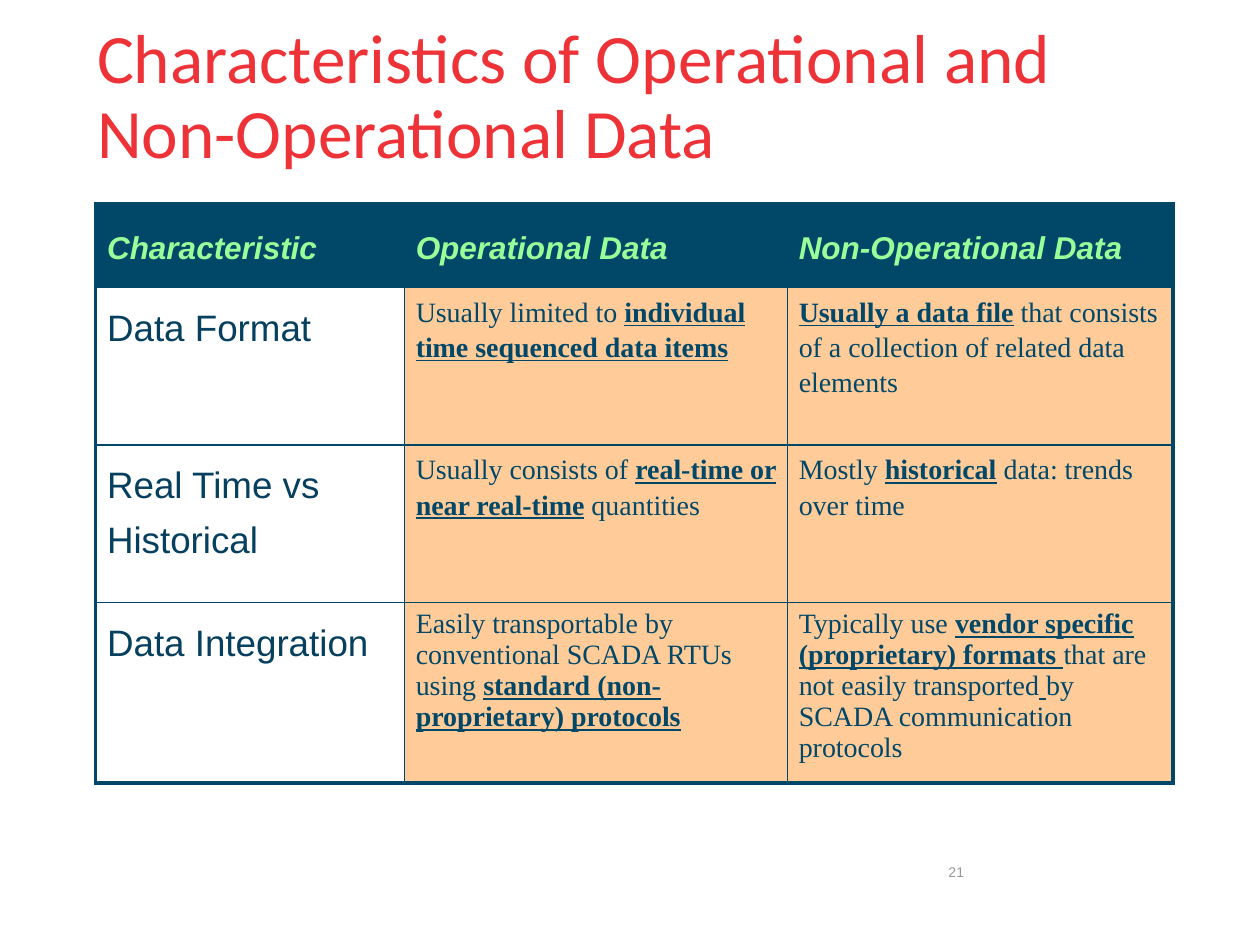
from dataclasses import dataclass
from typing import Any

import lxml.etree
import pptx
import pptx.dml.color
import pptx.enum.text
import pptx.oxml.ns
import pptx.util

# The slide is a grid of 100 columns by 75 rows
COLUMNS, ROWS = 100, 75
NAVY, PEACH, MINT, RED = "004768", "FFCC99", "99FF99", "EE3338"
OUTER, INNER = 2.25, 1
ANCHOR = pptx.enum.text.MSO_ANCHOR
ALIGN = pptx.enum.text.PP_ALIGN

deck = pptx.Presentation()
deck.slide_width = pptx.util.Inches(10)
deck.slide_height = pptx.util.Inches(7.5)
slide = deck.slides.add_slide(deck.slide_layouts[6])


@dataclass(frozen=True)
class Style:
    font: dict[str, Any]
    color: str
    line_spacing: Any = None


@dataclass(frozen=True)
class Place:
    left: float
    top: float
    width: float
    height: float


def across(columns: float) -> int:
    return round(deck.slide_width * columns / COLUMNS)


def down(rows: float) -> int:
    return round(deck.slide_height * rows / ROWS)


def rgb(color: str) -> pptx.dml.color.RGBColor:
    return pptx.dml.color.RGBColor.from_string(color)


def apply(target: Any, values: dict[str, Any]) -> None:
    for name, value in values.items():
        setattr(target, name, value)


def font_values(name: str, size: float, **extra: Any) -> dict[str, Any]:
    return {"name": name, "size": pptx.util.Pt(size), **extra}


EMPHASIS = {"bold": True, "underline": True}
UNDERLINE = {"underline": True}

TITLE = Style(font_values("Calibri", 39.6), RED, 0.9)
PAGE = Style(font_values("Arial", 8), "96989B")
HEADER = Style(font_values("Arial", 18, bold=True, italic=True), MINT, pptx.util.Pt(31.6))
LABEL = Style(font_values("Arial", 21), "07405F", pptx.util.Pt(31.6))
DETAIL = Style(font_values("Times New Roman", 16), NAVY, pptx.util.Pt(20))
TIGHT_DETAIL = Style(DETAIL.font, NAVY)

# Each cell is a list of runs: plain text, or text with extra font values
HEADINGS = [["Characteristic"], ["Operational Data"], ["Non-Operational Data"]]
CHARACTERISTICS = [
    [
        ["Data Format"],
        ["Usually limited to ", ("individual time sequenced data items", EMPHASIS)],
        [("Usually a data file", EMPHASIS),
         " that consists of a collection of related data elements"],
    ],
    [
        ["Real Time vs Historical"],
        ["Usually consists of ", ("real-time or near real-time", EMPHASIS), " quantities"],
        ["Mostly ", ("historical", EMPHASIS), " data: trends over time"],
    ],
    [
        ["Data Integration"],
        ["Easily transportable by conventional SCADA RTUs using ",
         ("standard (non-proprietary) protocols", EMPHASIS)],
        ["Typically use ", ("vendor specific (proprietary) formats ", EMPHASIS),
         "that are not easily transported", (" ", UNDERLINE),
         "by SCADA communication protocols"],
    ],
]
COLUMN_WIDTHS = [24.5, 30.4, 30.6]
ROW_HEIGHTS = [6.6, 12.5, 12.5, 14.3]


def write(frame: Any, runs: list, style: Style) -> Any:
    paragraph = frame.paragraphs[0]
    if style.line_spacing:
        paragraph.line_spacing = style.line_spacing
    for entry in runs:
        text, extra = (entry, {}) if isinstance(entry, str) else entry
        run = paragraph.add_run()
        run.text = text
        apply(run.font, {**style.font, **extra})
        run.font.color.rgb = rgb(style.color)
    return paragraph


def add_text(place: Place, text: str, style: Style, inset: tuple[float, float],
             align: Any = ALIGN.LEFT) -> None:
    box = slide.shapes.add_textbox(across(place.left), down(place.top),
                                   across(place.width), down(place.height))
    side, edge = map(pptx.util.Inches, inset)
    apply(box.text_frame, {
        "word_wrap": True, "vertical_anchor": ANCHOR.MIDDLE,
        "margin_left": side, "margin_right": side,
        "margin_top": edge, "margin_bottom": edge,
    })
    write(box.text_frame, [text], style).alignment = align


def add_borders(cell: Any, widths: dict[str, float]) -> None:
    properties = cell._tc.get_or_add_tcPr()
    for position, (side, width) in enumerate(widths.items()):
        line = lxml.etree.Element(pptx.oxml.ns.qn(f"a:ln{side}"),
                                  w=str(pptx.util.Pt(width)))
        fill = lxml.etree.SubElement(line, pptx.oxml.ns.qn("a:solidFill"))
        lxml.etree.SubElement(fill, pptx.oxml.ns.qn("a:srgbClr"), val=NAVY)
        properties.insert(position, line)


def add_comparison(left: float, top: float) -> None:
    cells = [HEADINGS, *CHARACTERISTICS]
    last_row, last_column = len(cells) - 1, len(HEADINGS) - 1
    table = slide.shapes.add_table(
        len(cells), len(HEADINGS), across(left), down(top),
        across(sum(COLUMN_WIDTHS)), down(sum(ROW_HEIGHTS))).table
    for column, width in zip(table.columns, COLUMN_WIDTHS):
        column.width = across(width)
    for row, height in zip(table.rows, ROW_HEIGHTS):
        row.height = down(height)

    for r, row_cells in enumerate(cells):
        for c, runs in enumerate(row_cells):
            cell = table.cell(r, c)
            if r == 0:
                style, fill = HEADER, NAVY
            elif c == 0:
                style, fill = LABEL, None
            else:
                style, fill = (TIGHT_DETAIL if r == last_row else DETAIL), PEACH
            apply(cell, {
                "margin_left": pptx.util.Inches(0.09), "margin_right": pptx.util.Inches(0.09),
                "margin_top": pptx.util.Inches(0.05), "margin_bottom": pptx.util.Inches(0.05),
                "vertical_anchor": ANCHOR.TOP,
            })
            if fill:
                cell.fill.solid()
                cell.fill.fore_color.rgb = rgb(fill)
            else:
                cell.fill.background()
            # Heavy lines around the table, light ones inside
            add_borders(cell, {
                "L": OUTER if c == 0 else INNER,
                "R": OUTER if c == last_column else INNER,
                "T": OUTER if r == 0 else INNER,
                "B": OUTER if r == last_row else INNER,
            })
            write(cell.text_frame, runs, style)


# Page number, comparison table and title
add_text(Place(56.8, 67.5, 20.7, 3.4), "21", PAGE, (0.1, 0.05), ALIGN.RIGHT)
add_comparison(7.6, 16.2)
add_text(Place(7.4, 2.8, 85.5, 10), "Characteristics of Operational and Non-Operational Data",
         TITLE, (0.03, 0.07))

deck.save("out.pptx")
